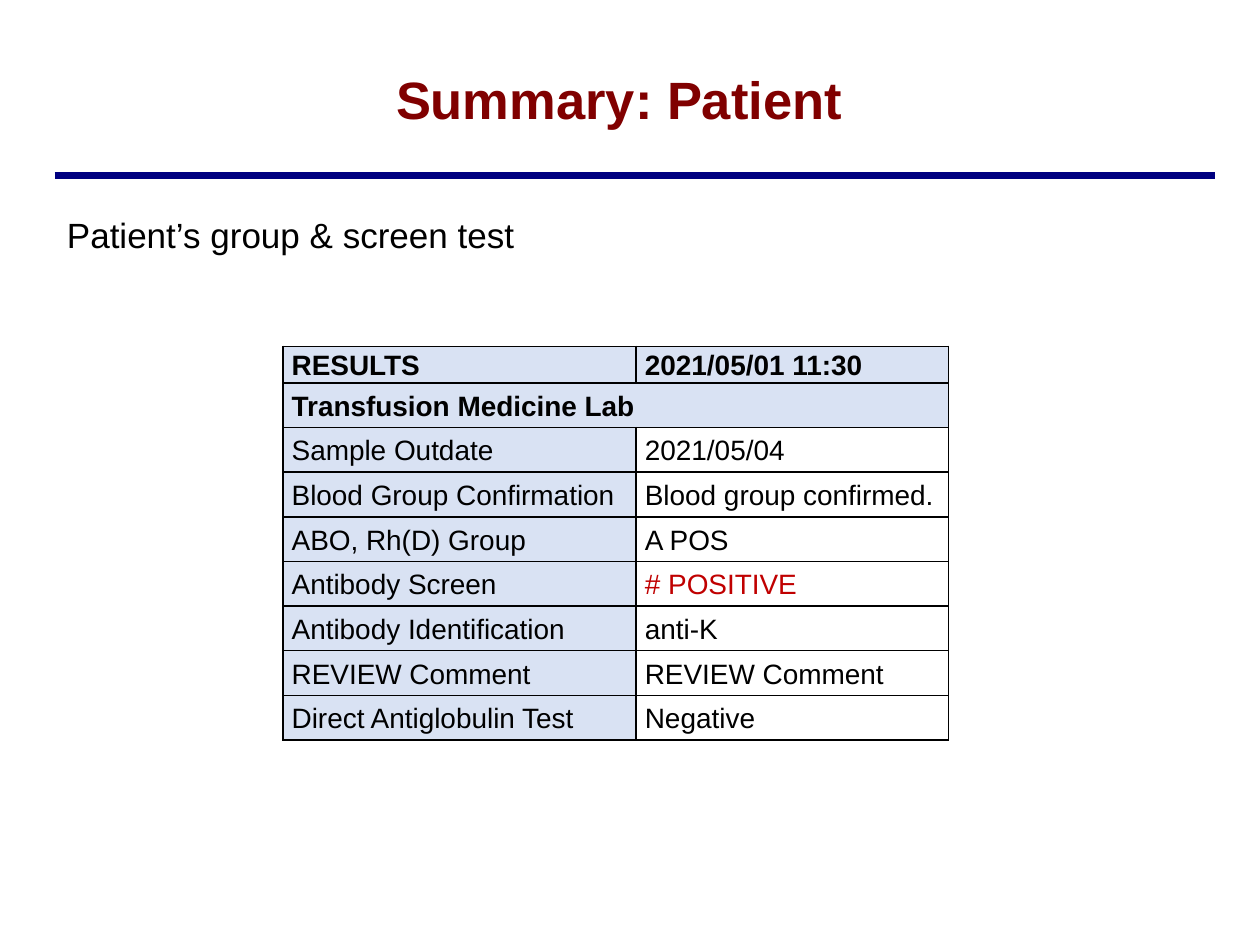
from lxml import etree
from pptx import Presentation
from pptx.dml.color import RGBColor
from pptx.enum.shapes import MSO_CONNECTOR
from pptx.enum.text import MSO_ANCHOR, PP_ALIGN
from pptx.oxml.ns import qn
from pptx.util import Cm, Pt

LINE = MSO_CONNECTOR.STRAIGHT
MIDDLE, TOP = MSO_ANCHOR.MIDDLE, MSO_ANCHOR.TOP
LEFT, CENTER = PP_ALIGN.LEFT, PP_ALIGN.CENTER

FONT = "Arial"
COLORS = {"title": "800000", "rule": "000080", "text": "000000",
          "label": "D9E2F3", "alert": "C00000"}

HEADS = 2  # bold rows at the top of the table
ROWS = [
    ("RESULTS", "2021/05/01 11:30"),
    ("Transfusion Medicine Lab", None),
    ("Sample Outdate", "2021/05/04"),
    ("Blood Group Confirmation", "Blood group confirmed."),
    ("ABO, Rh(D) Group", "A POS"),
    ("Antibody Screen", "# POSITIVE"),
    ("Antibody Identification", "anti-K"),
    ("REVIEW Comment", "REVIEW Comment"),
    ("Direct Antiglobulin Test", "Negative"),
]


def rgb(name):
    return RGBColor.from_string(COLORS[name])


class Deck:
    def __init__(self, width, height):
        self.file = Presentation()
        self.file.slide_width, self.file.slide_height = Cm(width), Cm(height)
        self.slide = self.file.slides.add_slide(self.file.slide_layouts[6])

    def style(self, para, size, color="text", bold=False):
        font = para.font
        font.name, font.size, font.bold = FONT, Pt(size), bold
        font.color.rgb = rgb(color)

    def rule(self, left, top, width):
        line = self.slide.shapes.add_connector(
            LINE, Cm(left), Cm(top), Cm(left + width), Cm(top))
        line.line.color.rgb = rgb("rule")
        line.line.width = Pt(4)
        etree.SubElement(line._element.spPr, qn("a:effectLst"))

    def text(self, words, box, size, color="text", bold=False,
             align=LEFT, anchor=TOP):
        frame = self.slide.shapes.add_textbox(*map(Cm, box)).text_frame
        frame.word_wrap = True
        frame.vertical_anchor = anchor
        para = frame.paragraphs[0]
        para.text, para.alignment = words, align
        self.style(para, size, color, bold)

    def border(self, cell):
        props = cell._tc.get_or_add_tcPr()
        for spot, side in enumerate(("lnL", "lnR", "lnT", "lnB")):
            edge = etree.Element(qn("a:" + side), w=str(Pt(1)))
            fill = etree.SubElement(edge, qn("a:solidFill"))
            etree.SubElement(fill, qn("a:srgbClr"), val=COLORS["text"])
            props.insert(spot, edge)

    def cell(self, cell, words, color, bold, shade):
        cell.margin_left = cell.margin_right = Cm(0.18)
        cell.margin_top, cell.margin_bottom = Cm(0.02), 0
        cell.vertical_anchor = MIDDLE
        if shade:
            cell.fill.solid()
            cell.fill.fore_color.rgb = rgb("label")
        else:
            cell.fill.background()
        self.border(cell)
        para = cell.text_frame.paragraphs[0]
        para.text = words or ""
        para.line_spacing, para.space_after = 1.06, Pt(8)
        self.style(para, 16, color, bold)

    def table(self, rows, left, top, widths, heights):
        grid = self.slide.shapes.add_table(
            len(rows), len(widths), Cm(left), Cm(top),
            Cm(sum(widths)), Cm(sum(heights))).table
        for col, width in zip(grid.columns, widths):
            col.width = Cm(width)
        for r, row in enumerate(rows):
            grid.rows[r].height = Cm(heights[r])
            head = r < HEADS
            for c, words in enumerate(row):
                color = "alert" if words == "# POSITIVE" else "text"
                self.cell(grid.cell(r, c), words, color, head, head or c == 0)
            if row[-1] is None:
                grid.cell(r, 0).merge(grid.cell(r, len(row) - 1))


def main():
    deck = Deck(25.4, 19.05)

    # Title and rule
    deck.rule(1.1, 3.53, 23.4)
    deck.text("Summary: Patient ", (0.13, 0.18, 25, 3.6), 30, "title", True,
              CENTER, MIDDLE)

    # Test results
    deck.table(ROWS, 5.7, 6.98, (7.12, 6.3), [0.69] + [0.9] * (len(ROWS) - 1))

    # Heading above the table
    deck.text("Patient’s group & screen test", (1.1, 4.17, 12.7, 1.11), 20)

    deck.file.save("out.pptx")


if __name__ == "__main__":
    main()
